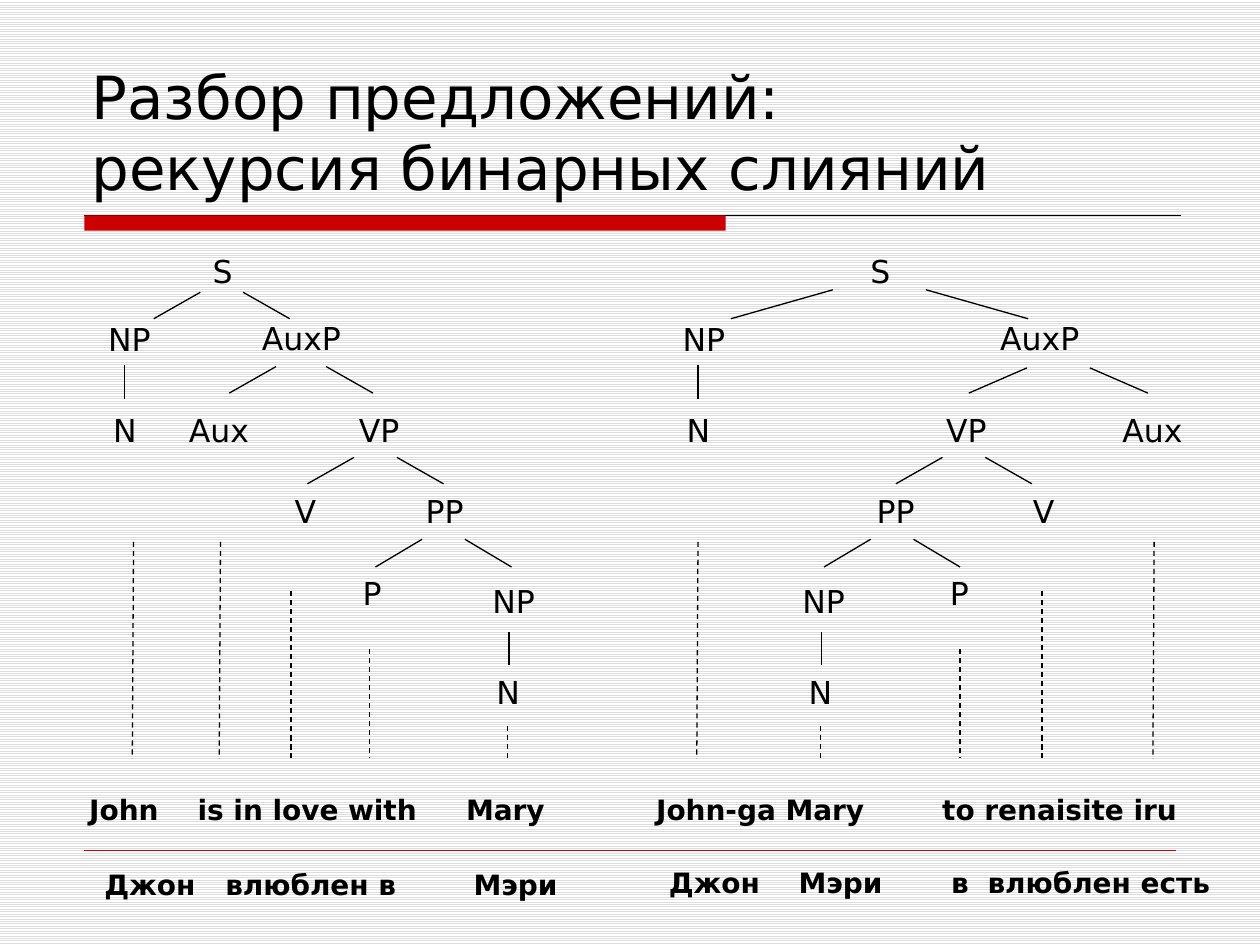
from dataclasses import dataclass

from lxml.etree import SubElement
from pptx import Presentation
from pptx.dml.color import RGBColor
from pptx.enum.dml import MSO_LINE_DASH_STYLE as Dash, MSO_PATTERN as Pattern
from pptx.enum.shapes import MSO_CONNECTOR as Connector, MSO_SHAPE as Shape
from pptx.enum.text import MSO_ANCHOR as Anchor
from pptx.oxml.ns import qn
from pptx.slide import Slide
from pptx.util import Pt

PX = 9144  # EMU per px, 100 px to the inch
FONT = "DejaVu Sans"
BLACK = RGBColor(0x00, 0x00, 0x00)
WHITE = RGBColor(0xFF, 0xFF, 0xFF)
STRIPE = RGBColor(0xDD, 0xDD, 0xDD)
RED = RGBColor(0xCC, 0x00, 0x00)

LABEL_WIDTHS = {"S": 37, "N": 39, "NP": 54, "VP": 52, "AuxP": 83,
                "Aux": 68, "V": 37, "PP": 50, "P": 35}
LABEL_HEIGHT = 40
WORDS_LINE = 602  # where the dashed lines meet the words


@dataclass(frozen=True)
class Node:
    label: str
    left: int
    top: int


@dataclass(frozen=True)
class Fork:
    """Two branches spreading evenly from a centre."""
    center: int
    top: int
    bottom: int
    inner: int = 17
    outer: int = 54


@dataclass(frozen=True)
class Stem:
    x: int
    top: int
    bottom: int


@dataclass(frozen=True)
class Drop:
    """Dashed line from a category down to its word."""
    x: int
    top: int
    slant: int = 0


@dataclass(frozen=True)
class Tree:
    nodes: tuple[Node, ...]
    forks: tuple[Fork, ...]
    stems: tuple[Stem, ...]
    drops: tuple[Drop, ...]


@dataclass(frozen=True)
class Sentence:
    words: str
    left: int
    top: int
    width: int
    tabs: tuple[int, ...]


ENGLISH_TREE = Tree(
    nodes=(Node("S", 159, 195), Node("NP", 76, 249), Node("AuxP", 198, 248),
           Node("N", 80, 321), Node("Aux", 140, 321), Node("VP", 275, 321),
           Node("V", 224, 386), Node("PP", 328, 386), Node("P", 278, 451),
           Node("NP", 381, 457), Node("N", 384, 529)),
    forks=(Fork(176, 232, 253), Fork(239, 291, 312, 20, 57),
           Fork(298, 363, 384), Fork(352, 428, 450)),
    stems=(Stem(99, 290, 317), Stem(404, 502, 528)),
    drops=(Drop(106, 430, 1), Drop(175, 430, 1), Drop(231, 469),
           Drop(293, 515), Drop(403, 576)),
)
JAPANESE_TREE = Tree(
    nodes=(Node("S", 681, 195), Node("NP", 532, 249), Node("AuxP", 784, 248),
           Node("N", 535, 321), Node("VP", 741, 321), Node("Aux", 881, 321),
           Node("PP", 686, 386), Node("V", 810, 386), Node("P", 744, 451),
           Node("NP", 627, 457), Node("N", 632, 529)),
    forks=(Fork(698, 230, 253, 37, 118), Fork(840, 292, 312, 25, 71),
           Fork(765, 363, 384), Fork(708, 428, 450)),
    stems=(Stem(554, 290, 317), Stem(652, 502, 528)),
    drops=(Drop(554, 430, 1), Drop(916, 430, 1), Drop(827, 469),
           Drop(762, 515), Drop(651, 576)),
)
SENTENCES = (
    Sentence("John\tis in love with\tMary", 61, 624, 388, (86, 299)),
    Sentence("John-ga Mary\tto renaisite iru", 511, 624, 444, (227,)),
    Sentence("Джон\tвлюблен в\tМэри", 73, 684, 382, (96, 293)),
    Sentence("Джон\tМэри\tв\tвлюблен есть", 521, 682, 450, (103, 224, 253)),
)


def add_text(slide: Slide, text: str, left: int, top: int, width: int,
             height: int, *, size: int = 18, bold: bool = False,
             anchor: Anchor = Anchor.TOP, tabs: tuple[int, ...] = ()) -> None:
    box = slide.shapes.add_textbox(left * PX, top * PX, width * PX, height * PX)
    frame = box.text_frame
    frame.word_wrap = True
    frame.margin_right = 0
    frame.vertical_anchor = anchor
    paragraph = frame.paragraphs[0]
    paragraph.text = text
    for run in paragraph.runs:
        run.font.name = FONT
        run.font.size = Pt(size)
        run.font.bold = bold
        run.font.color.rgb = BLACK
    if tabs:
        tab_list = SubElement(paragraph._p.get_or_add_pPr(), qn("a:tabLst"))
        for position in tabs:
            SubElement(tab_list, qn("a:tab"), pos=str(position * PX), algn="l")


def add_line(slide: Slide, x1: int, y1: int, x2: int, y2: int, *,
             color: RGBColor = BLACK, weight: float = 0.75,
             dashed: bool = False) -> None:
    line = slide.shapes.add_connector(
        Connector.STRAIGHT, x1 * PX, y1 * PX, x2 * PX, y2 * PX)
    line.line.color.rgb = color
    line.line.width = Pt(weight)
    if dashed:
        line.line.dash_style = Dash.DASH
    SubElement(line._element.spPr, qn("a:effectLst"))


def draw_tree(slide: Slide, tree: Tree) -> None:
    for node in tree.nodes:
        add_text(slide, node.label, node.left, node.top,
                 LABEL_WIDTHS[node.label], LABEL_HEIGHT)
    for fork in tree.forks:
        for side in (-1, 1):
            add_line(slide, fork.center + side * fork.inner, fork.top,
                     fork.center + side * fork.outer, fork.bottom)
    for stem in tree.stems:
        add_line(slide, stem.x, stem.top, stem.x, stem.bottom)
    for drop in tree.drops:
        add_line(slide, drop.x, drop.top, drop.x - drop.slant, WORDS_LINE,
                 dashed=True)


def draw_frame(slide: Slide) -> None:
    # Striped background
    background = slide.background.fill
    background.patterned()
    background.pattern = Pattern.LIGHT_HORIZONTAL
    background.fore_color.rgb = STRIPE
    background.back_color.rgb = WHITE

    # Rule and bar under the title, thin rule between the sentences
    add_line(slide, 67, 171, 937, 171)
    bar = slide.shapes.add_shape(
        Shape.RECTANGLE, 67 * PX, 171 * PX, 509 * PX, 12 * PX)
    bar.shadow.inherit = False
    bar.fill.solid()
    bar.fill.fore_color.rgb = RED
    bar.line.fill.background()
    add_line(slide, 67, 675, 933, 675, color=RED, weight=0.25)


def main() -> None:
    deck = Presentation()
    deck.slide_width, deck.slide_height = 1000 * PX, 750 * PX
    slide = deck.slides.add_slide(deck.slide_layouts[6])

    draw_frame(slide)
    add_text(slide, "Разбор предложений:\vрекурсия бинарных слияний",
             63, 33, 875, 133, size=34, anchor=Anchor.BOTTOM)

    # Syntax trees and the sentences below them
    for tree in (ENGLISH_TREE, JAPANESE_TREE):
        draw_tree(slide, tree)
    for sentence in SENTENCES:
        add_text(slide, sentence.words, sentence.left, sentence.top,
                 sentence.width, 37, size=16, bold=True, tabs=sentence.tabs)

    deck.save("out.pptx")


if __name__ == "__main__":
    main()
